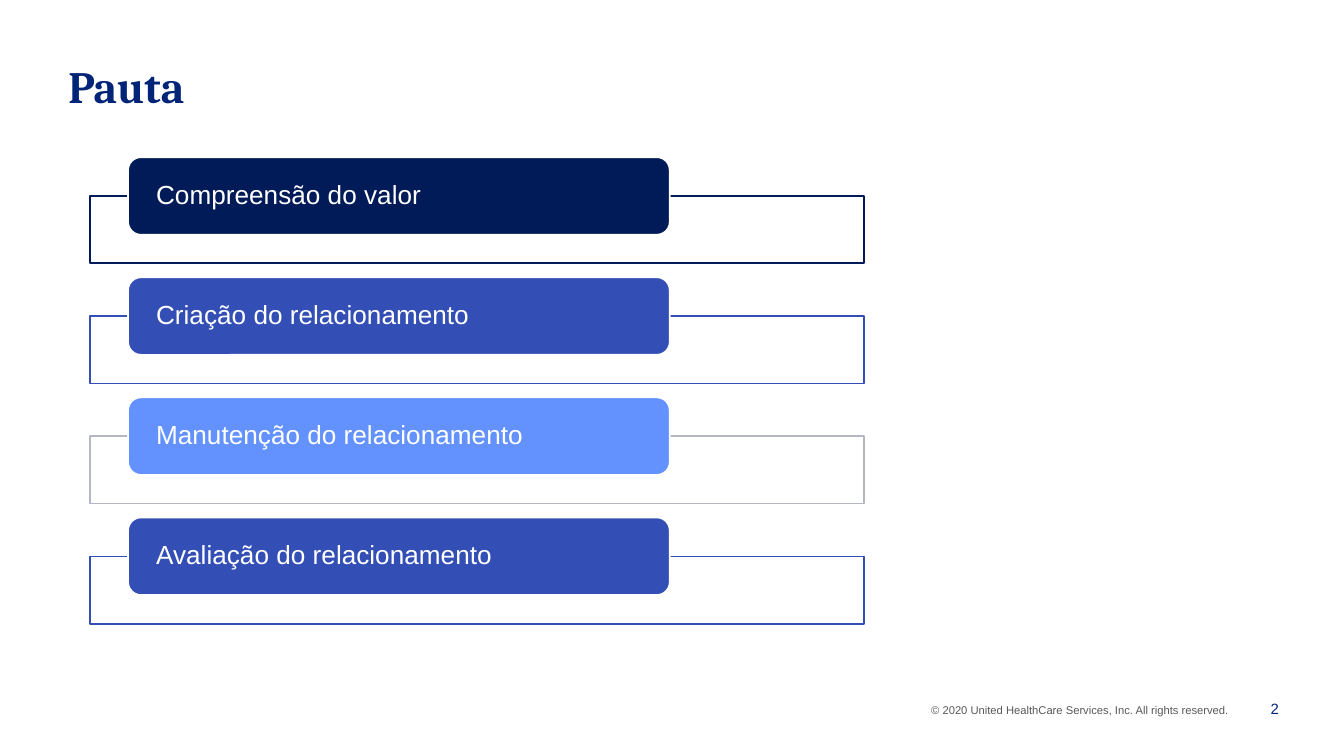
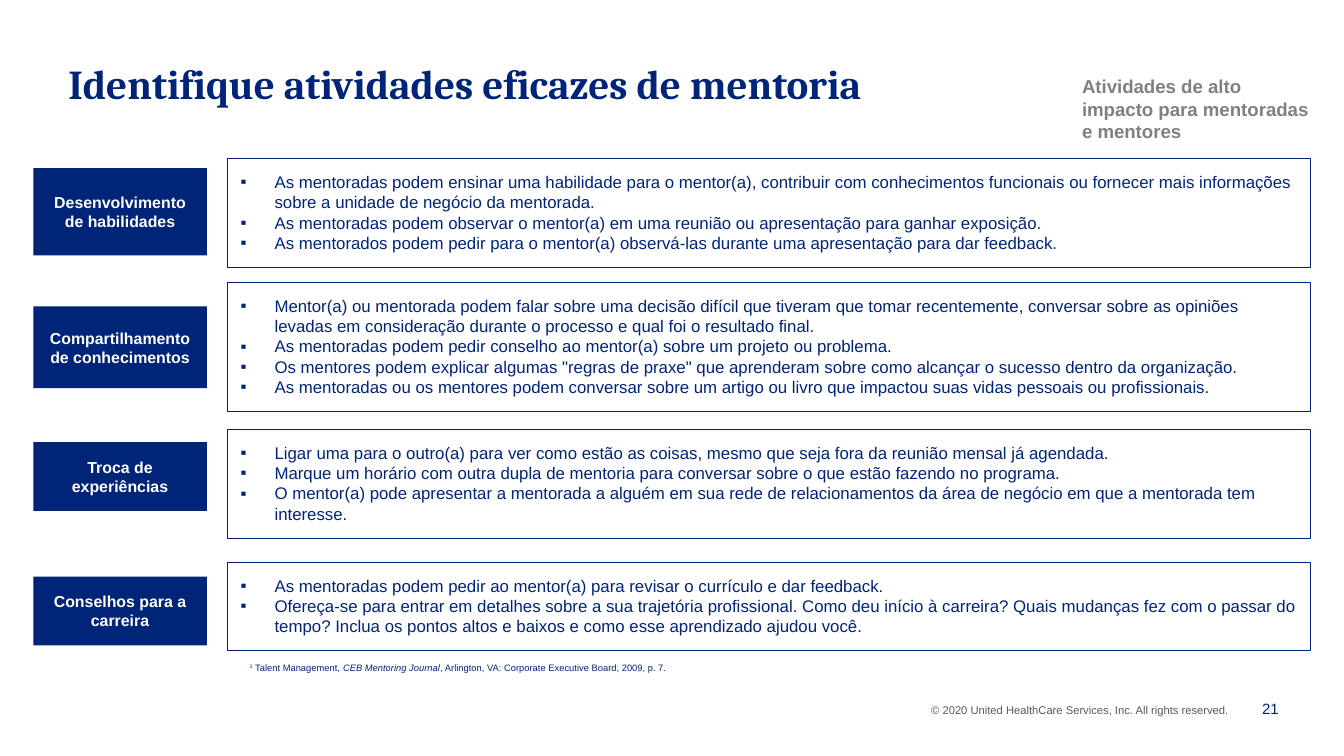
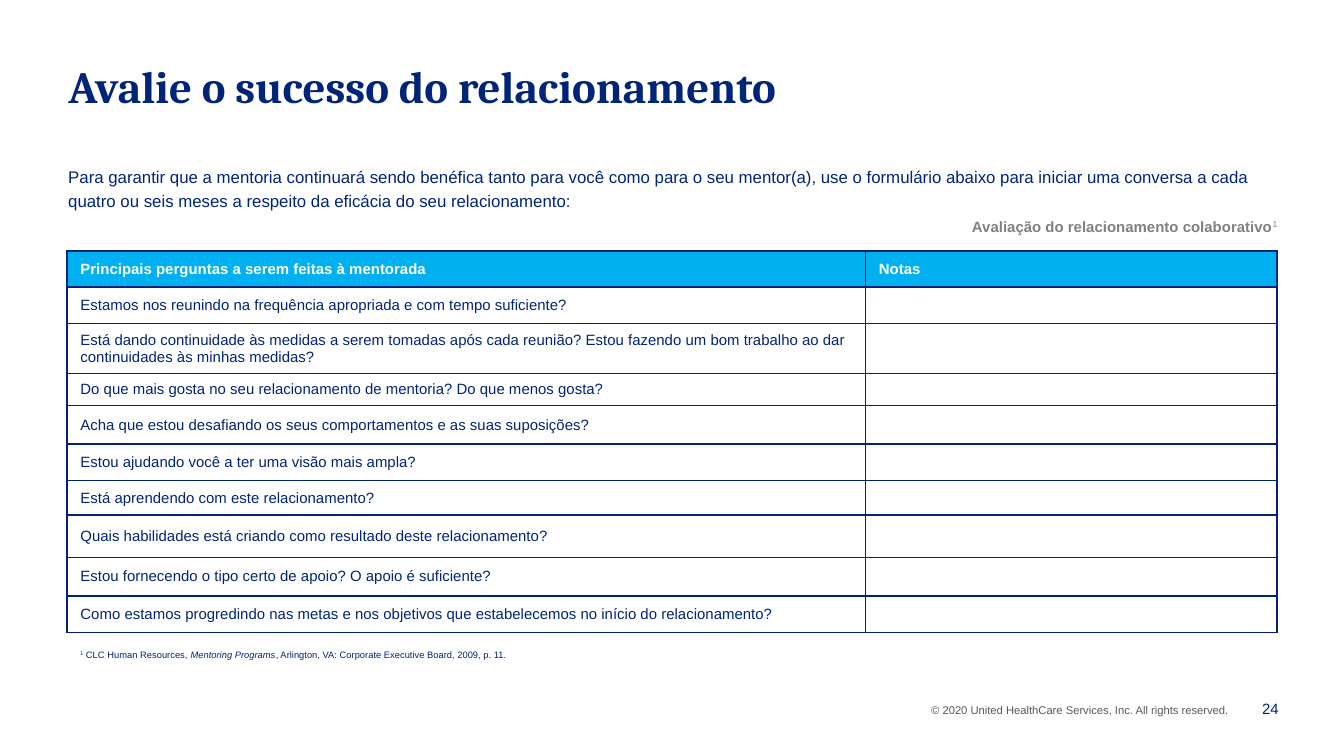
from lxml.etree import SubElement
from pptx import Presentation
from pptx.dml.color import RGBColor
from pptx.enum.shapes import MSO_SHAPE as Preset
from pptx.enum.text import MSO_ANCHOR as Anchor, MSO_AUTO_SIZE as AutoSize, PP_ALIGN as Align
from pptx.oxml.ns import qn
from pptx.util import Cm, Pt

NAVY, DEEP, ROYAL, SKY = "002477", "001B58", "334FB6", "6392FF"
WHITE, GRAY, SILVER, DARK, CYAN = "FFFFFF", "808080", "B4B6C5", "595959", "00B0F0"
rgb = RGBColor.from_string


def format_text(frame, size, hue, bold=False, font="Arial", align=Align.LEFT,
                anchor=Anchor.TOP, margins=(0.25, 0.13, 0.25, 0.13)):
    frame.word_wrap = True
    frame.auto_size = AutoSize.NONE
    frame.vertical_anchor = anchor
    frame.margin_left, frame.margin_top, frame.margin_right, frame.margin_bottom = map(Cm, margins)
    for paragraph in frame.paragraphs:
        paragraph.alignment = align
        for run in paragraph.runs:
            run.font.name = font
            run.font.size = Pt(size)
            run.font.bold = bold
            run.font.color.rgb = rgb(hue)


def add_box(slide, preset, at, fill=None, line=None, width=1):
    box = slide.shapes.add_shape(preset, *map(Cm, at))
    box.shadow.inherit = False
    if fill:
        box.fill.solid()
        box.fill.fore_color.rgb = rgb(fill)
    else:
        box.fill.background()
    if line:
        box.line.color.rgb = rgb(line)
        box.line.width = Pt(width)
    else:
        box.line.fill.background()
    return box


deck = Presentation()
deck.slide_width, deck.slide_height = Cm(25.4), Cm(14.29)

slides = []
for heading, size, number in [
    ("Pauta", 24, "2"),
    ("Identifique atividades eficazes de mentoria", 22, "21"),
    ("Avalie o sucesso do relacionamento", 24, "24"),
]:
    slide = deck.slides.add_slide(deck.slide_layouts[5])
    title = slide.shapes.title
    title.left, title.top, title.width, title.height = Cm(1.04), Cm(0.97), Cm(20.17), Cm(1.52)
    title.text_frame.text = heading
    format_text(title.text_frame, size, NAVY, True, "Cambria")
    rights = slide.shapes.add_textbox(Cm(17.35), Cm(13.16), Cm(6.55), Cm(0.5)).text_frame
    rights.text = "© 2020 United HealthCare Services, Inc. All rights reserved."
    format_text(rights, 6, DARK)
    folio = slide.shapes.add_textbox(Cm(23.42), Cm(13), Cm(1), Cm(0.8)).text_frame
    folio.text = number
    format_text(folio, 8, NAVY, align=Align.RIGHT, anchor=Anchor.MIDDLE)
    slides.append(slide)

agenda, activities, evaluation = slides

topics = [
    ("Compreensão do valor", DEEP, DEEP),
    ("Criação do relacionamento", ROYAL, ROYAL),
    ("Manutenção do relacionamento", SKY, SILVER),
    ("Avaliação do relacionamento", ROYAL, ROYAL),
]
for index, (topic, fill, outline) in enumerate(topics):
    top = 2.97 + index * 2.27
    add_box(agenda, Preset.RECTANGLE, (1.7, top + 0.74, 14.63, 1.27), WHITE, outline)
    label = add_box(agenda, Preset.ROUNDED_RECTANGLE, (2.42, top, 10.24, 1.47), fill, WHITE)
    label.text_frame.text = topic
    format_text(label.text_frame, 14, WHITE, anchor=Anchor.MIDDLE, margins=(0.46, 0, 0.46, 0))
    label.text_frame.paragraphs[0].line_spacing = 0.9

groups = [
    ("Desenvolvimento de habilidades", 3.18, 1.65, 3, 2.06, [
        "As mentoradas podem ensinar uma habilidade para o mentor(a), contribuir com conhecimentos funcionais ou fornecer mais informações sobre a unidade de negócio da mentorada.",
        "As mentoradas podem observar o mentor(a) em uma reunião ou apresentação para ganhar exposição.",
        "As mentorados podem pedir para o mentor(a) observá-las durante uma apresentação para dar feedback.",
    ]),
    ("Compartilhamento de conhecimentos", 5.79, 1.55, 5.34, 2.44, [
        "Mentor(a) ou mentorada podem falar sobre uma decisão difícil que tiveram que tomar recentemente, conversar sobre as opiniões levadas em consideração durante o processo e qual foi o resultado final.",
        "As mentoradas podem pedir conselho ao mentor(a) sobre um projeto ou problema.",
        "Os mentores podem explicar algumas \"regras de praxe\" que aprenderam sobre como alcançar o sucesso dentro da organização.",
        "As mentoradas ou os mentores podem conversar sobre um artigo ou livro que impactou suas vidas pessoais ou profissionais.",
    ]),
    ("Troca de experiências", 8.36, 1.3, 8.12, 2.06, [
        "Ligar uma para o outro(a) para ver como estão as coisas, mesmo que seja fora da reunião mensal já agendada.",
        "Marque um horário com outra dupla de mentoria para conversar sobre o que estão fazendo no programa.",
        "O mentor(a) pode apresentar a mentorada a alguém em sua rede de relacionamentos da área de negócio em que a mentorada tem interesse.",
    ]),
    ("Conselhos para a carreira", 10.9, 1.3, 10.63, 1.67, [
        "As mentoradas podem pedir ao mentor(a) para revisar o currículo e dar feedback.",
        "Ofereça-se para entrar em detalhes sobre a sua trajetória profissional. Como deu início à carreira? Quais mudanças fez com o passar do tempo? Inclua os pontos altos e baixos e como esse aprendizado ajudou você.",
    ]),
]
for category, tag_top, tag_height, list_top, list_height, tips in groups:
    tag = add_box(activities, Preset.RECTANGLE, (0.63, tag_top, 3.28, tag_height), NAVY)
    tag.text_frame.text = category
    format_text(tag.text_frame, 8.5, WHITE, True, align=Align.CENTER,
                anchor=Anchor.MIDDLE, margins=(0.25, 0, 0.25, 0))
    advice = add_box(activities, Preset.RECTANGLE, (4.3, list_top, 20.47, list_height), None, NAVY, 0.75)
    advice.text_frame.text = "\n".join(tips)
    for paragraph in advice.text_frame.paragraphs:
        properties = paragraph._p.get_or_add_pPr()
        properties.set("marL", str(Cm(0.64)))
        properties.set("indent", str(-Cm(0.64)))
        SubElement(properties, qn("a:buFont"), typeface="Arial")
        SubElement(properties, qn("a:buChar"), char="▪")
    format_text(advice.text_frame, 9, NAVY, margins=(0.25, 0.25, 0.25, 0.25))

intro = evaluation.shapes.add_textbox(Cm(1.04), Cm(2.95), Cm(23.22), Cm(1.17)).text_frame
intro.text = "Para garantir que a mentoria continuará sendo benéfica tanto para você como para o seu mentor(a), use o formulário abaixo para iniciar uma conversa a cada quatro ou seis meses a respeito da eficácia do seu relacionamento:"
format_text(intro, 9, NAVY)
intro.paragraphs[0].line_spacing = 1.2

questions = [
    ("Principais perguntas a serem feitas à mentorada", 0.69),
    ("Estamos nos reunindo na frequência apropriada e com tempo suficiente?", 0.69),
    ("Está dando continuidade às medidas a serem tomadas após cada reunião? Estou fazendo um bom trabalho ao dar continuidades às minhas medidas?", 0.94),
    ("Do que mais gosta no seu relacionamento de mentoria? Do que menos gosta?", 0.59),
    ("Acha que estou desafiando os seus comportamentos e as suas suposições?", 0.73),
    ("Estou ajudando você a ter uma visão mais ampla?", 0.69),
    ("Está aprendendo com este relacionamento?", 0.65),
    ("Quais habilidades está criando como resultado deste relacionamento?", 0.8),
    ("Estou fornecendo o tipo certo de apoio? O apoio é suficiente?", 0.73),
    ("Como estamos progredindo nas metas e nos objetivos que estabelecemos no início do relacionamento?", 0.69),
]
form = evaluation.shapes.add_table(len(questions), 2, Cm(1.27), Cm(4.74), Cm(22.86), Cm(7.2)).table
form.columns[0].width, form.columns[1].width = Cm(15.09), Cm(7.77)
for index, (question, height) in enumerate(questions):
    form.rows[index].height = Cm(height)
    is_header = index == 0
    for cell, words in zip(form.rows[index].cells, (question, "Notas" if is_header else "")):
        cell.text = words
        format_text(cell.text_frame, 8, WHITE if is_header else NAVY, is_header)
        cell.text_frame.paragraphs[0]._p.get_or_add_endParaRPr().set("sz", "800")
        cell.vertical_anchor = Anchor.MIDDLE
        cell.margin_left = cell.margin_right = Cm(0.25)
        cell.margin_top = cell.margin_bottom = Cm(0.13)
        properties = cell._tc.get_or_add_tcPr()
        for side in ("a:lnL", "a:lnR", "a:lnT", "a:lnB"):
            border = SubElement(properties, qn(side), w=str(Pt(1)))
            SubElement(SubElement(border, qn("a:solidFill")), qn("a:srgbClr"), val=NAVY)
        if is_header:
            cell.fill.solid()
            cell.fill.fore_color.rgb = rgb(CYAN)
        else:
            cell.fill.background()

for slide, at, size, caption, mark in [
    (activities, (19.66, 1.42, 5.74, 1.27), 10, "Atividades de alto impacto para mentoradas e mentores", ""),
    (evaluation, (17.58, 4.11, 7.57, 0.33), 8, "Avaliação do relacionamento colaborativo", "1"),
]:
    frame = slide.shapes.add_textbox(*map(Cm, at)).text_frame
    frame.text = caption
    format_text(frame, size, GRAY, True, margins=(0.79, 0, 0.56, 0))
    if mark:
        note = frame.paragraphs[0].add_run()
        note.text = mark
        note.font.name, note.font.size = "Arial", Pt(size)
        note.font.color.rgb = rgb(GRAY)
        note._r.get_or_add_rPr().set("baseline", "30000")

for slide, at, author, work, imprint in [
    (activities, (4.47, 12.52, 13.69, 0.2), " Talent Management, ", "CEB Mentoring Journal",
     ", Arlington, VA: Corporate Executive Board, 2009, p. 7."),
    (evaluation, (1.27, 12.27, 22.86, 0.2), " CLC Human Resources, ", "Mentoring Programs",
     ", Arlington, VA: Corporate Executive Board, 2009, p. 11."),
]:
    frame = slide.shapes.add_textbox(*map(Cm, at)).text_frame
    citation = frame.paragraphs[0]
    for piece in ("1", author, work, imprint):
        citation.add_run().text = piece
    format_text(frame, 5, NAVY, margins=(0.25, 0, 0.25, 0))
    citation.runs[0]._r.get_or_add_rPr().set("baseline", "30000")
    citation.runs[2].font.italic = True

deck.save("out.pptx")
